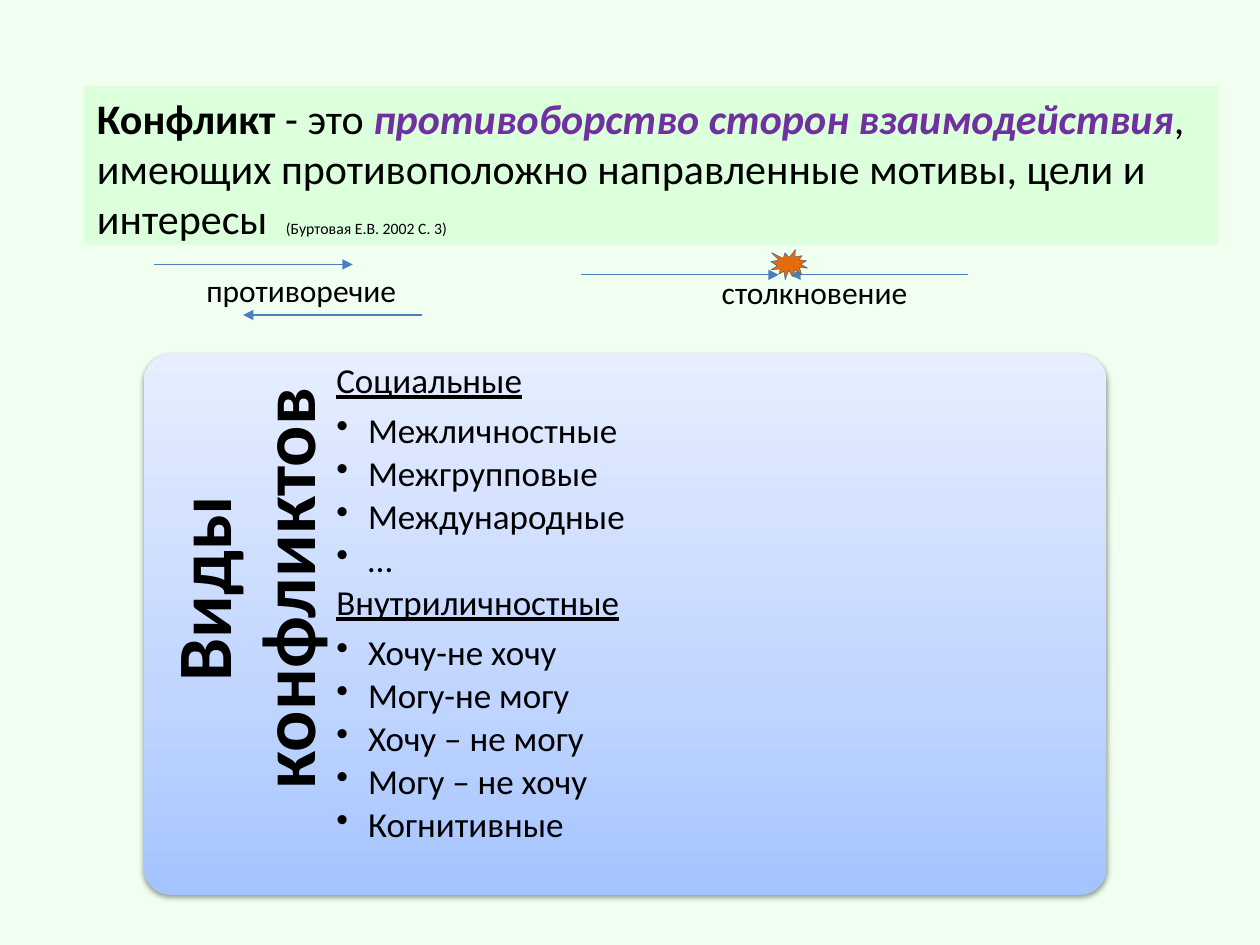
from copy import deepcopy

from lxml import etree
from pptx import Presentation
from pptx import util as u
from pptx.dml import color
from pptx.enum import shapes, text
from pptx.oxml import ns

COLORS = {
    "background": "F1FFF1",
    "definition": "DCFFDC",
    "ink": "000000",
    "accent": "7030A0",
    "arrow": "4B7EBC",
    "clash": "E46C0A",
    "clash_edge": "3A5F8C",
}
PANEL_STOPS = [(0, "A4C4FF"), (0.35, "BFD4FF"), (1, "E6EEFF")]
DEFINITION = [
    ("Конфликт ", {"bold": True}),
    ("- это ", {}),
    ("противоборство сторон взаимодействия",
     {"bold": True, "italic": True, "ink": "accent"}),
    (", имеющих противоположно направленные мотивы, цели и интересы\t", {}),
    ("(Буртовая Е.В. 2002 С. 3)", {"points": 9}),
]
KINDS = {
    "Социальные": ["Межличностные", "Межгрупповые", "Международные", "…"],
    "Внутриличностные": ["Хочу-не хочу", "Могу-не могу", "Хочу – не могу",
                         "Могу – не хочу", "Когнитивные"],
}
LABELS = [("противоречие", 3.91, 5.33, 4.39), ("столкновение", 14.3, 5.38, 4.29)]
ARROWS = [(3.1, 7.11, 5.33), (8.51, 4.9, 6.35), (11.71, 15.7, 5.54), (19.51, 15.93, 5.54)]


def rgb(name):
    return color.RGBColor.from_string(COLORS.get(name, name))


def cm(*lengths):
    return [u.Cm(length) for length in lengths]


def set_all(target, values):
    for name, value in values.items():
        setattr(target, name, value)


def add_xml(parent, tag, **attributes):
    child = etree.SubElement(parent, ns.qn(tag))
    for name, value in attributes.items():
        child.set(name, str(value))
    return child


def paint(fill, name):
    fill.solid()
    fill.fore_color.rgb = rgb(name)


def add_run(paragraph, words, points=24, ink="ink", **style):
    run = paragraph.add_run()
    run.text = words
    set_all(run.font, {"name": "Calibri", "size": u.Pt(points),
                       "bold": False, "italic": False, **style})
    run.font.color.rgb = rgb(ink)


def set_frame(frame, top=0, right=0):
    set_all(frame, {
        "word_wrap": True, "vertical_anchor": text.MSO_ANCHOR.TOP,
        "margin_left": 0, "margin_top": u.Cm(top),
        "margin_right": u.Cm(right), "margin_bottom": 0,
    })


def fill_definition(body):
    left, top, width, height = cm(1.7, 1.73, 22.86, 3.2)
    set_all(body, {"left": left, "top": top, "width": width, "height": height})
    paint(body.fill, "definition")
    body.text_frame.auto_size = text.MSO_AUTO_SIZE.NONE
    paragraph = body.text_frame.paragraphs[0]
    properties = paragraph._p.get_or_add_pPr()
    properties.set("marL", "0")
    properties.set("indent", "0")
    add_xml(properties, "a:buNone")
    tabs = add_xml(properties, "a:tabLst")
    add_xml(tabs, "a:tab", pos=u.Cm(22.17), algn="r")
    for words, style in DEFINITION:
        add_run(paragraph, words, **style)


def add_panel(group):
    panel = group.shapes.add_shape(shapes.MSO_SHAPE.ROUNDED_RECTANGLE,
                                   *cm(2.9, 7.14, 19.41, 10.9))
    panel.adjustments[0] = 0.05
    panel.line.fill.background()
    panel.fill.gradient()
    panel.fill.gradient_angle = 90
    properties = panel._element.spPr
    stop_list = properties.find(".//" + ns.qn("a:gsLst"))
    stop_list.append(deepcopy(stop_list[-1]))
    for stop, (position, shade) in zip(panel.fill.gradient_stops, PANEL_STOPS):
        stop.position = position
        stop.color.rgb = rgb(shade)
    panel.shadow.inherit = False
    shadow = add_xml(properties.find(ns.qn("a:effectLst")), "a:outerShdw",
                     blurRad=u.Pt(3.1), dist=u.Pt(1.6), dir=90 * 60000, rotWithShape=0)
    add_xml(add_xml(shadow, "a:srgbClr", val=COLORS["ink"]), "a:alpha", val=38000)


def add_heading(group):
    heading = group.shapes.add_textbox(*cm(0.38, 9.65, 8.94, 3.89))
    heading.rotation = 270
    set_frame(heading.text_frame, top=0.43, right=0.53)
    paragraph = heading.text_frame.paragraphs[0]
    set_all(paragraph, {"alignment": text.PP_ALIGN.CENTER, "line_spacing": 0.9})
    add_run(paragraph, "Виды конфликтов", 44, bold=True)


def add_kinds(group):
    kinds = group.shapes.add_textbox(*cm(6.78, 7.14, 14.45, 10.9))
    frame = kinds.text_frame
    set_frame(frame, top=0.18)
    entries = [(words, words in KINDS) for kind, items in KINDS.items()
               for words in [kind, *items]]
    for index, (words, is_kind) in enumerate(entries):
        paragraph = frame.add_paragraph() if index else frame.paragraphs[0]
        set_all(paragraph, {"line_spacing": 0.9, "space_after": u.Pt(7 if is_kind else 3)})
        if not is_kind:
            paragraph.level = 1
            properties = paragraph._p.get_or_add_pPr()
            properties.set("marL", str(u.Cm(0.64)))
            properties.set("indent", str(-u.Cm(0.64)))
            add_xml(properties, "a:buChar", char="•")
        add_run(paragraph, words, 20, underline=is_kind)


def add_label(slide, words, left, top, width):
    label = slide.shapes.add_textbox(*cm(left, top, width, 1.02))
    set_all(label.text_frame, {"word_wrap": False,
                               "auto_size": text.MSO_AUTO_SIZE.SHAPE_TO_FIT_TEXT})
    add_run(label.text_frame.paragraphs[0], words, 18)


def add_arrow(slide, start, end, level):
    arrow = slide.shapes.add_connector(shapes.MSO_CONNECTOR.STRAIGHT,
                                       *cm(start, level, end, level))
    arrow.line.width = u.Pt(0.75)
    arrow.line.color.rgb = rgb("arrow")
    add_xml(arrow.line._get_or_add_ln(), "a:tailEnd", type="triangle")
    add_xml(arrow._element.spPr, "a:effectLst")


def add_clash(slide):
    clash = slide.shapes.add_shape(shapes.MSO_SHAPE.EXPLOSION1, *cm(15.54, 5.03, 0.74, 0.61))
    clash.shadow.inherit = False
    paint(clash.fill, "clash")
    clash.line.width = u.Pt(0.25)
    clash.line.color.rgb = rgb("clash_edge")


def main():
    deck = Presentation()
    set_all(deck, {"slide_width": u.Cm(25.4), "slide_height": u.Cm(19.05)})
    slide = deck.slides.add_slide(deck.slide_layouts[1])
    paint(slide.background.fill, "background")
    title, body = slide.placeholders
    title._element.getparent().remove(title._element)
    fill_definition(body)
    group = slide.shapes.add_group_shape()
    add_panel(group)
    add_heading(group)
    add_kinds(group)
    for label in LABELS:
        add_label(slide, *label)
    for arrow in ARROWS:
        add_arrow(slide, *arrow)
    add_clash(slide)
    deck.save("out.pptx")


if __name__ == "__main__":
    main()
